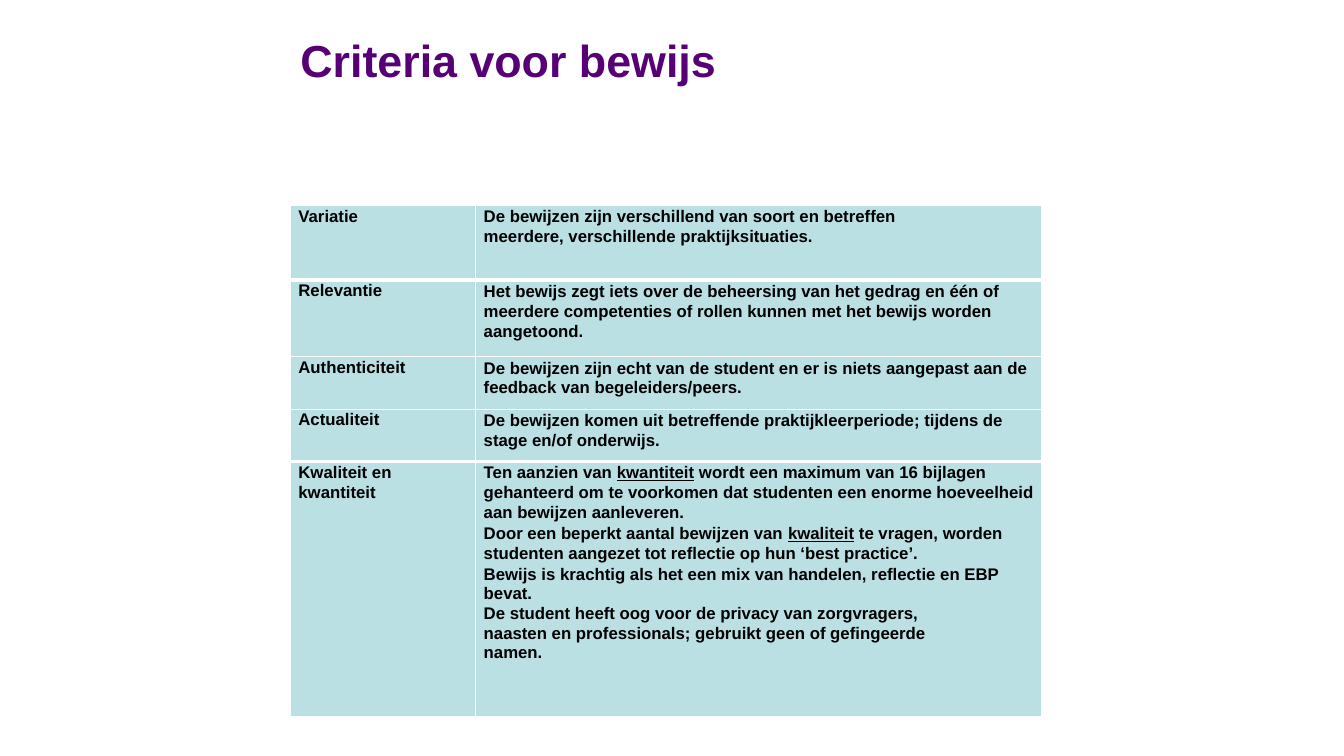
from lxml.etree import SubElement
from pptx import Presentation
from pptx.dml.color import RGBColor
from pptx.enum.text import MSO_ANCHOR
from pptx.oxml.ns import qn
from pptx.util import Cm, Pt

TITLE = "Criteria voor bewijs"

# Each paragraph: (space before in pt, right indent in cm, spans); a span is (text, underlined)
CRITERIA = [
    ("Variatie", [
        (0, 2.3, [("De bewijzen zijn verschillend van soort en betreffen meerdere, "
                   "verschillende praktijksituaties.", False)]),
    ]),
    ("Relevantie", [
        (0, 0, [("Het bewijs zegt iets over de beheersing van het gedrag en één of meerdere "
                 "competenties of rollen kunnen met het bewijs worden aangetoond.", False)]),
    ]),
    ("Authenticiteit", [
        (0, 0, [("De bewijzen zijn echt van de student en er is niets aangepast aan de "
                 "feedback van begeleiders/peers.", False)]),
    ]),
    ("Actualiteit", [
        (0, 0, [("De bewijzen komen uit betreffende praktijkleerperiode; tijdens de "
                 "stage en/of onderwijs.", False)]),
    ]),
    ("Kwaliteit en kwantiteit", [
        (0, 0, [("Ten aanzien van ", False), ("kwantiteit", True),
                (" wordt een maximum van 16 bijlagen gehanteerd om te voorkomen dat studenten "
                 "een enorme hoeveelheid aan bewijzen aanleveren.", False)]),
        (0.9, 0, [("Door een beperkt aantal bewijzen van ", False), ("kwaliteit", True),
                  (" te vragen, worden studenten aangezet tot reflectie op hun "
                   "‘best practice’.", False)]),
        (0.9, 0, [("Bewijs is krachtig als het een mix van handelen, reflectie en EBP bevat.",
                   False)]),
        (0, 2.3, [("De student heeft oog voor de privacy van zorgvragers, naasten en "
                   "professionals; gebruikt geen of gefingeerde namen.", False)]),
    ]),
]

THEME = {
    "title": {"name": "Arial", "size": Pt(32), "bold": True, "color": "570076"},
    "body": {"name": "Arial", "size": Pt(12), "bold": True, "color": "000000"},
    "cell": "BBE0E3",
    "border": "FFFFFF",
    "thin": Pt(1),
    "thick": Pt(3),
}

LEFT, TITLE_TOP, TABLE_TOP = 7.32, 0.56, 5.18
TITLE_SIZE = (14.07, 1.9)
COLUMNS = [4.67, 14.27]
ROWS = [1.88, 1.93, 1.32, 1.32, 6.43]
THICK_RULES = {1, 4}  # horizontal rules counted from the top edge of the table
CELL_FORMAT = {"margin_left": 0, "margin_right": 0, "margin_top": Cm(0.03),
               "margin_bottom": 0, "vertical_anchor": MSO_ANCHOR.TOP}


def apply(target, values):
    for name, value in values.items():
        if name == "color":
            target.color.rgb = RGBColor.from_string(value)
        else:
            setattr(target, name, value)


def add_spans(para, spans, style):
    for text, underlined in spans:
        span = para.add_run()
        span.text = text
        apply(span.font, THEME[style])
        if underlined:
            span.font.underline = True


def add_borders(cell, row):
    widths = {"a:lnL": THEME["thin"], "a:lnR": THEME["thin"]}
    for tag, rule in (("a:lnT", row), ("a:lnB", row + 1)):
        widths[tag] = THEME["thick"] if rule in THICK_RULES else THEME["thin"]
    properties = cell._tc.get_or_add_tcPr()
    for tag, width in widths.items():
        line = SubElement(properties, qn(tag), w=str(width))
        fill = SubElement(line, qn("a:solidFill"))
        SubElement(fill, qn("a:srgbClr"), val=THEME["border"])


def fill_cell(cell, row, paragraphs, line_spacing):
    add_borders(cell, row)
    apply(cell, CELL_FORMAT)
    cell.fill.solid()
    cell.fill.fore_color.rgb = RGBColor.from_string(THEME["cell"])
    frame = cell.text_frame
    for index, (before, right_indent, spans) in enumerate(paragraphs):
        para = frame.add_paragraph() if index else frame.paragraphs[0]
        indents = para._p.get_or_add_pPr()
        indents.set("marL", str(Cm(0.2)))
        indents.set("marR", str(Cm(right_indent)))
        apply(para, {"line_spacing": line_spacing, "space_before": Pt(before)})
        add_spans(para, spans, "body")


def add_title(page):
    box = page.shapes.add_textbox(Cm(LEFT), Cm(TITLE_TOP), *map(Cm, TITLE_SIZE))
    apply(box.text_frame, {"word_wrap": True, "vertical_anchor": MSO_ANCHOR.MIDDLE})
    add_spans(box.text_frame.paragraphs[0], [(TITLE, False)], "title")


def add_criteria(page):
    table = page.shapes.add_table(len(ROWS), len(COLUMNS), Cm(LEFT), Cm(TABLE_TOP),
                                  Cm(sum(COLUMNS)), Cm(sum(ROWS))).table
    apply(table, {"first_row": False, "horz_banding": False})
    for column, width in zip(table.columns, COLUMNS):
        column.width = Cm(width)
    for row, (height, (label, paragraphs)) in enumerate(zip(ROWS, CRITERIA)):
        table.rows[row].height = Cm(height)
        label_spacing = 1.05 if " " in label else 1.0
        fill_cell(table.cell(row, 0), row, [(0, 0.5, [(label, False)])], label_spacing)
        fill_cell(table.cell(row, 1), row, paragraphs, 1.05)


def main():
    deck = Presentation()
    apply(deck, {"slide_width": Cm(33.87), "slide_height": Cm(19.05)})
    page = deck.slides.add_slide(deck.slide_layouts[6])
    add_title(page)
    add_criteria(page)
    deck.save("out.pptx")


if __name__ == "__main__":
    main()
